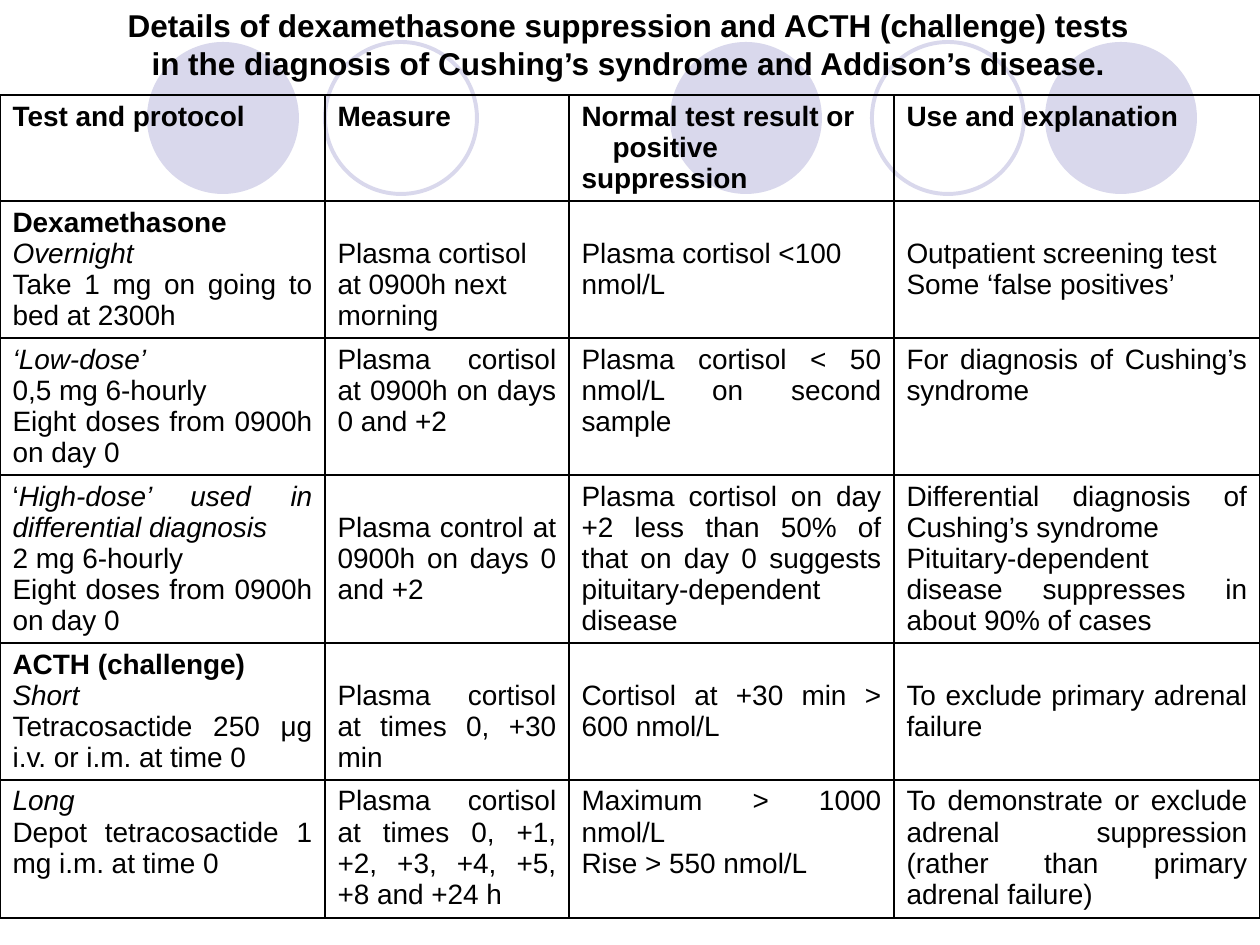
from lxml import etree
from pptx import Presentation
from pptx import util as u
from pptx.dml.color import RGBColor
from pptx.enum import shapes, text
from pptx.oxml import ns

SCALE = 914400 / 126  # EMU in one px
HUES = {"ink": "000000", "ring": "D9D8EC"}
FONT = "Arial"

# Circles behind the table: left edge and whether filled
TOP, SIZE = 42, 152
DISCS = [(670, True), (1045, True), (147, True), (872, False), (325, False)]

COLS = [325, 244, 325, 366]
ROWS = [106, 137, 137, 168, 137, 138]
PAD, LINE = 6, 31

TITLE = ["Details of dexamethasone suppression and ACTH (challenge) tests",
         "in the diagnosis of Cushing’s syndrome and Addison’s disease."]

# A cell is a list of paragraphs; a paragraph is a string or a list of (text, style)
CELLS = [
    [[[("Test and protocol", "b")]],
     [[("Measure", "b")]],
     [[("Normal test result or\v\tpositive\vsuppression", "b")]],
     [[("Use and explanation", "b")]]],
    [[[("Dexamethasone", "b")], [("Overnight", "i")],
      "Take 1 mg on going to bed at 2300h"],
     ["Plasma cortisol at 0900h next morning"],
     ["Plasma cortisol <100 nmol/L"],
     ["Outpatient screening test", "Some ‘false positives’"]],
    [[[("‘Low-dose’", "i")], "0,5 mg 6-hourly",
      "Eight doses from 0900h on day 0"],
     ["Plasma cortisol at 0900h on days 0 and +2"],
     ["Plasma cortisol < 50 nmol/L on second sample"],
     ["For diagnosis of Cushing’s syndrome"]],
    [[[("‘", ""), ("High-dose’ used in differential diagnosis", "i")],
      "2 mg 6-hourly", "Eight doses from 0900h on day 0"],
     ["Plasma control at 0900h on days 0 and +2"],
     ["Plasma cortisol on day +2 less than 50% of that on day 0 suggests "
      "pituitary-dependent disease"],
     ["Differential diagnosis of Cushing’s syndrome",
      "Pituitary-dependent disease suppresses in about 90% of cases"]],
    [[[("ACTH (challenge)", "b")], [("Short", "i")],
      "Tetracosactide 250 μg\vi.v. or i.m. at time 0"],
     ["Plasma cortisol at times 0, +30 min"],
     ["Cortisol at +30 min > 600 nmol/L"],
     ["To exclude primary adrenal failure"]],
    [[[("Long", "i")], "Depot tetracosactide 1 mg i.m. at time 0"],
     ["Plasma cortisol at times 0, +1, +2, +3, +4, +5, +8 and +24 h"],
     ["Maximum > 1000 nmol/L", "Rise > 550 nmol/L"],
     ["To demonstrate or exclude adrenal suppression (rather than primary "
      "adrenal failure)"]],
]
LEFT = {(0, 2), (1, 1), (1, 2)}  # cells that are not justified
LOW = {(1, 1), (1, 2), (1, 3), (3, 1), (4, 1), (4, 2), (4, 3)}  # one line down


def px(n):
    return u.Emu(round(n * SCALE))


def hue(name):
    return RGBColor.from_string(HUES[name])


def add_run(para, words, size, style=""):
    """Add words as runs, with a line break at each vertical tab."""
    for n, part in enumerate(words.split("\v")):
        if n:
            para.add_line_break()
        run = para.add_run()
        run.text = part
        font = run.font
        font.name, font.size = FONT, u.Pt(size)
        font.bold, font.italic = "b" in style, "i" in style
        font.color.rgb = hue("ink")


def fill_text(frame, paras, size, align):
    for n, runs in enumerate(paras):
        para = frame.paragraphs[0] if n == 0 else frame.add_paragraph()
        para.alignment = align
        if isinstance(runs, str):
            runs = [(runs, "")]
        if any("\t" in words for words, _ in runs):
            tabs = etree.SubElement(para._p.get_or_add_pPr(), ns.qn("a:tabLst"))
            etree.SubElement(tabs, ns.qn("a:tab"), pos=str(px(LINE)), algn="l")
        for words, style in runs:
            add_run(para, words, size, style)


def add_disc(slide, left, solid):
    disc = slide.shapes.add_shape(shapes.MSO_SHAPE.OVAL, px(left), px(TOP),
                                  px(SIZE), px(SIZE))
    disc.shadow.inherit = False
    if solid:
        disc.fill.solid()
        disc.fill.fore_color.rgb = hue("ring")
        disc.line.fill.background()
    else:
        disc.fill.background()
        disc.line.color.rgb = hue("ring")
        disc.line.width = u.Pt(2.25)


def add_edges(cell):
    props = cell._tc.get_or_add_tcPr()
    for side in ("lnL", "lnR", "lnT", "lnB"):
        edge = etree.SubElement(props, ns.qn("a:" + side), w=str(u.Pt(1)))
        paint = etree.SubElement(edge, ns.qn("a:solidFill"))
        etree.SubElement(paint, ns.qn("a:srgbClr"), val=HUES["ink"])


def add_grid(slide):
    grid = slide.shapes.add_table(len(ROWS), len(COLS), px(0), px(95),
                                  px(sum(COLS)), px(sum(ROWS))).table
    grid.first_row = grid.horz_banding = False
    for col, wide in zip(grid.columns, COLS):
        col.width = px(wide)
    for r, high in enumerate(ROWS):
        grid.rows[r].height = px(high)
        for c, paras in enumerate(CELLS[r]):
            cell = grid.cell(r, c)
            add_edges(cell)
            cell.fill.background()
            cell.margin_top = px(PAD + LINE if (r, c) in LOW else PAD)
            align = text.PP_ALIGN.LEFT if (r, c) in LEFT else text.PP_ALIGN.JUSTIFY
            fill_text(cell.text_frame, paras, 16, align)


def set_title(slide):
    title = slide.shapes.title
    title.left, title.top, title.width, title.height = map(px, (105, 0, 1047, 88))
    frame = title.text_frame
    frame.word_wrap = False
    frame.auto_size = text.MSO_AUTO_SIZE.SHAPE_TO_FIT_TEXT
    frame.vertical_anchor = text.MSO_ANCHOR.MIDDLE
    fill_text(frame, [[(words, "b")] for words in TITLE], 18, text.PP_ALIGN.CENTER)
    slide.shapes._spTree.append(title._element)  # in front of the circles


def main():
    deck = Presentation()
    deck.slide_width, deck.slide_height = px(1260), px(945)
    slide = deck.slides.add_slide(deck.slide_layouts[5])
    for left, solid in DISCS:
        add_disc(slide, left, solid)
    add_grid(slide)
    set_title(slide)
    deck.save("out.pptx")


if __name__ == "__main__":
    main()
